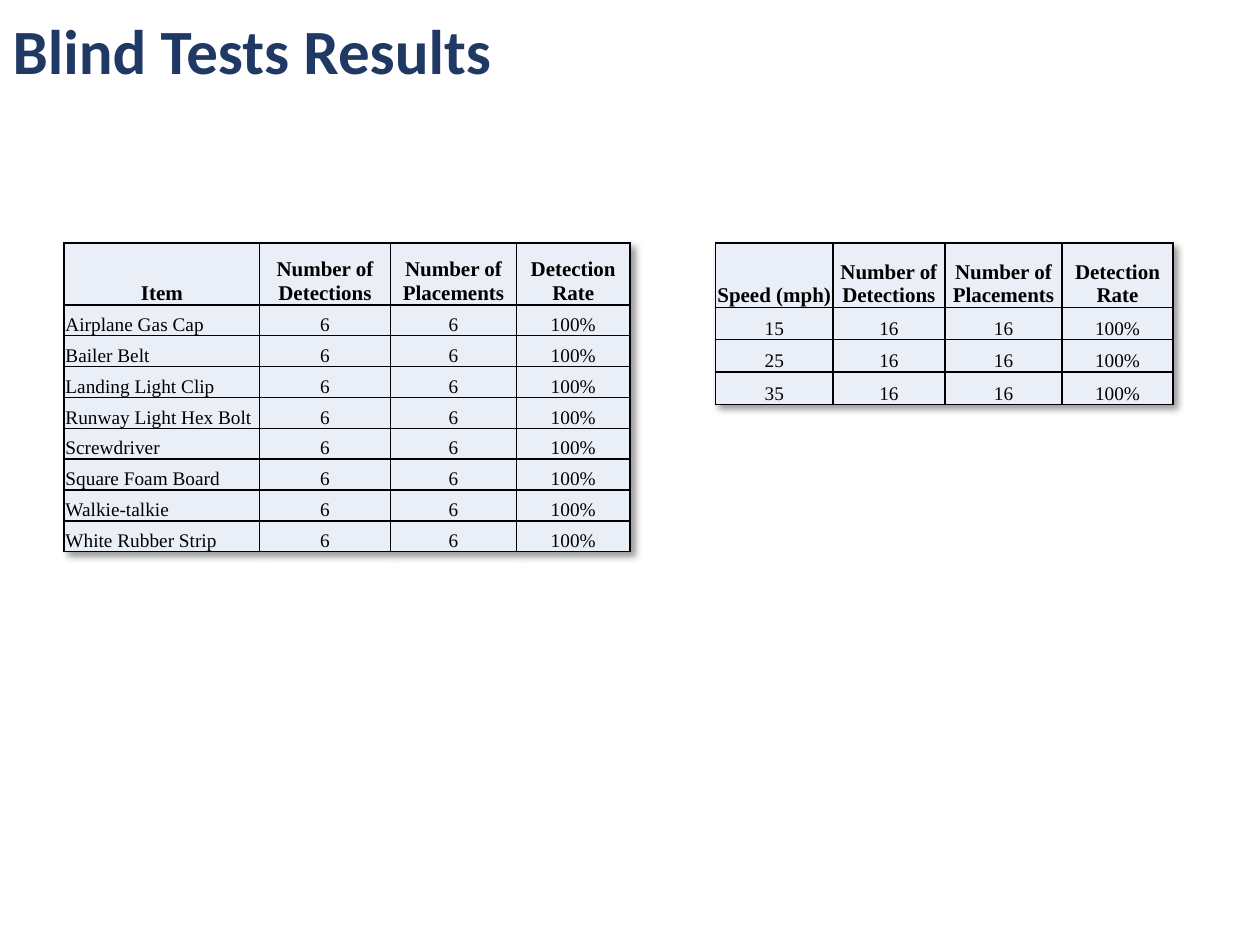
import pptx
import pptx.dml.color
import pptx.enum.text
import pptx.oxml
import pptx.oxml.ns
import pptx.util
from pptx.util import Inches, Pt

COLORS = {"title": "203864", "text": "000000", "border": "000000", "cell": "EAEFF7"}
TITLE = "Blind Tests Results"
MEASURES = ["Number of Detections", "Number of Placements", "Detection Rate"]
ITEMS = ["Airplane Gas Cap", "Bailer Belt", "Landing Light Clip", "Runway Light Hex Bolt",
         "Screwdriver", "Square Foam Board", "Walkie-talkie", "White Rubber Strip"]
SPEEDS = ["15", "25", "35"]

ALIGN = pptx.enum.text.PP_ALIGN
ANCHOR = pptx.enum.text.MSO_ANCHOR
TABLES = [
    {"rows": [["Item"] + MEASURES] + [[item, "6", "6", "100%"] for item in ITEMS],
     "left": 0.51, "widths": [1.55, 1.04, 1, 0.9], "header": 0.49, "row": 0.245,
     "label_align": ALIGN.LEFT},
    {"rows": [["Speed (mph)"] + MEASURES] + [[speed, "16", "16", "100%"] for speed in SPEEDS],
     "left": 5.68, "widths": [0.93, 0.89, 0.93, 0.88], "header": 0.51, "row": 0.257,
     "label_align": ALIGN.CENTER},
]
TABLE_TOP = 1.93


def rgb(name):
    return pptx.dml.color.RGBColor.from_string(COLORS[name])


def format_runs(p, font, size, color, bold):
    for r in p.runs:
        r.font.name = font
        r.font.size = Pt(size)
        r.font.bold = bold
        r.font.color.rgb = rgb(color)


def add_borders(cell):
    """Draw all four sides; the line elements must precede the cell fill."""
    tc_pr = cell._tc.get_or_add_tcPr()
    for i, side in enumerate(("lnL", "lnR", "lnT", "lnB")):
        tc_pr.insert(i, pptx.oxml.parse_xml(
            f'<a:{side} {pptx.oxml.ns.nsdecls("a")} w="{Pt(1)}"><a:solidFill>'
            f'<a:srgbClr val="{COLORS["border"]}"/></a:solidFill></a:{side}>'))


def add_shadow(table):
    table._tbl.tblPr.insert(0, pptx.oxml.parse_xml(
        f'<a:effectLst {pptx.oxml.ns.nsdecls("a")}>'
        f'<a:outerShdw blurRad="{Pt(4)}" dist="{Pt(3)}" dir="2700000" algn="tl" rotWithShape="0">'
        '<a:srgbClr val="000000"><a:alpha val="40000"/></a:srgbClr>'
        '</a:outerShdw></a:effectLst>'))


def fill_cell(cell, text, align, header):
    cell.margin_left = cell.margin_right = cell.margin_top = Inches(0.01)
    cell.margin_bottom = 0
    cell.vertical_anchor = ANCHOR.BOTTOM
    cell.fill.solid()
    cell.fill.fore_color.rgb = rgb("cell")
    add_borders(cell)
    cell.text_frame.text = text
    p = cell.text_frame.paragraphs[0]
    p.alignment = align
    format_runs(p, "Times New Roman", 12 if header else 11, "text", header)


def add_results(s, spec):
    rows, widths = spec["rows"], spec["widths"]
    heights = [spec["header"]] + [spec["row"]] * (len(rows) - 1)
    table = s.shapes.add_table(len(rows), len(widths), Inches(spec["left"]), Inches(TABLE_TOP),
                               Inches(sum(widths)), Inches(sum(heights))).table
    table.horz_banding = False
    add_shadow(table)
    for column, width in zip(table.columns, widths):
        column.width = Inches(width)
    for i, (values, height) in enumerate(zip(rows, heights)):
        table.rows[i].height = Inches(height)
        for j, text in enumerate(values):
            is_label = i > 0 and j == 0
            align = spec["label_align"] if is_label else ALIGN.CENTER
            fill_cell(table.cell(i, j), text, align, i == 0)


def main():
    prs = pptx.Presentation()
    prs.slide_width, prs.slide_height = Inches(10), Inches(7.5)
    s = prs.slides.add_slide(prs.slide_layouts[5])

    title = s.shapes.title
    title.left, title.top, title.width, title.height = 0, 0, Inches(7.7), Inches(0.86)
    tf = title.text_frame
    tf.text = TITLE
    tf.vertical_anchor = ANCHOR.MIDDLE
    p = tf.paragraphs[0]
    p.alignment = ALIGN.LEFT
    p.line_spacing = 0.9
    format_runs(p, "Calibri", 36, "title", True)

    for results in TABLES:
        add_results(s, results)
    prs.save("out.pptx")


if __name__ == "__main__":
    main()
